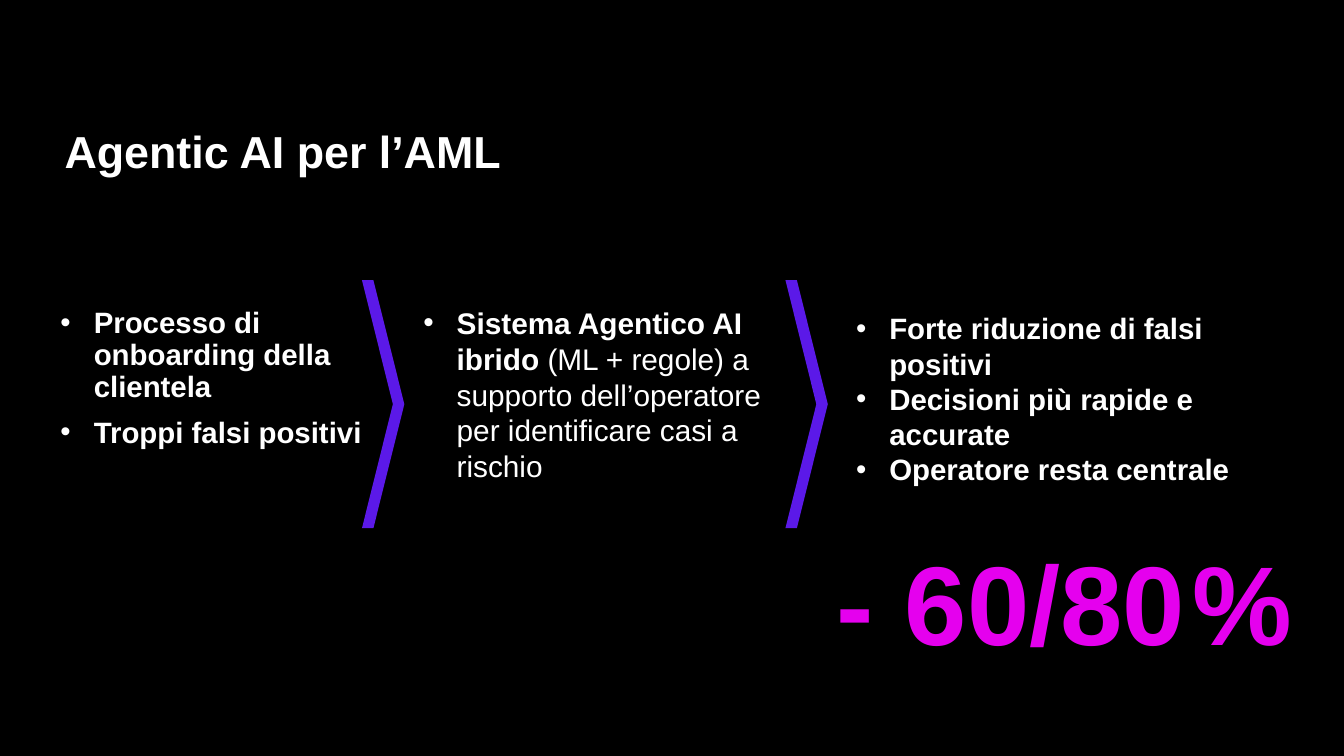
from pptx import Presentation
from pptx.dml.color import RGBColor
from pptx.enum.shapes import MSO_SHAPE
from pptx.enum.text import MSO_ANCHOR, MSO_AUTO_SIZE, PP_ALIGN
from pptx.util import Inches, Pt
from lxml import etree

BLACK = RGBColor(0x00, 0x00, 0x00)
WHITE = RGBColor(0xFF, 0xFF, 0xFF)
VIOLET = RGBColor(0x5B, 0x19, 0xE8)
MAGENTA = RGBColor(0xE5, 0x00, 0xEE)
A = "{http://schemas.openxmlformats.org/drawingml/2006/main}"


def add_run(p, text, size, color=WHITE, bold=True):
    r = p.add_run()
    r.text = text
    r.font.name = "Arial"
    r.font.size = Pt(size)
    r.font.bold = bold
    r.font.color.rgb = color


def add_bullet(p):
    pPr = p._p.get_or_add_pPr()
    pPr.set("marL", str(Inches(0.33)))
    pPr.set("indent", str(-Inches(0.33)))
    etree.SubElement(pPr, A + "buFont", typeface="Arial")
    etree.SubElement(pPr, A + "buChar", char="•")


prs = Presentation()
prs.slide_width, prs.slide_height = Inches(13.33), Inches(7.5)
s = prs.slides.add_slide(prs.slide_layouts.get_by_name("Comparison"))
s.background.fill.solid()
s.background.fill.fore_color.rgb = BLACK

# Title
title = s.shapes.title
title.left, title.top = Inches(0.54), Inches(1.24)
title.width, title.height = Inches(12.24), Inches(0.79)
tf = title.text_frame
tf.auto_size = MSO_AUTO_SIZE.NONE
tf.vertical_anchor = MSO_ANCHOR.TOP
p = tf.paragraphs[0]
p.alignment = PP_ALIGN.LEFT
p.line_spacing = 0.9
add_run(p, "Agentic AI per l’AML", 32)

# Three columns: box, size, line spacing, gap between items, items as (bold, plain)
problem = [("Processo di onboarding della clientela", ""), ("Troppi falsi positivi", "")]
solution = [("Sistema Agentico AI ibrido ",
             "(ML + regole) a supporto dell’operatore per identificare casi a rischio")]
results = [("Forte riduzione di falsi positivi", ""),
           ("Decisioni più rapide e accurate", ""),
           ("Operatore resta centrale", "")]
columns = [
    ((0.5, 3.01, 3.29, 2.34), 21, 0.9, 10, problem),
    ((4.13, 2.98, 3.71, 1.86), 21.3, 1.0, 0, solution),
    ((8.42, 3.04, 4.34, 1.83), 21, 1.0, 0, results),
]
bodies = [sp for sp in s.placeholders if sp.placeholder_format.idx in (1, 2, 3)]
for sp, (box, size, spacing, gap, items) in zip(bodies, columns):
    sp.left, sp.top, sp.width, sp.height = map(Inches, box)
    tf = sp.text_frame
    tf.word_wrap = True
    if items is problem:
        tf.auto_size = MSO_AUTO_SIZE.NONE
        tf.vertical_anchor = MSO_ANCHOR.TOP
    else:
        tf.auto_size = MSO_AUTO_SIZE.SHAPE_TO_FIT_TEXT
        tf.vertical_anchor = MSO_ANCHOR.MIDDLE
        tf.margin_left = tf.margin_right = Inches(0.07)
        tf.margin_top = tf.margin_bottom = Inches(0.03)
    for i, (strong, plain) in enumerate(items):
        p = tf.add_paragraph() if i else tf.paragraphs[0]
        add_bullet(p)
        p.line_spacing = spacing
        p.space_before = Pt(gap if i else 0)
        add_run(p, strong, size)
        if plain:
            add_run(p, plain, size, bold=False)

for sp in list(s.placeholders):
    if not sp.text_frame.text:
        sp.element.getparent().remove(sp.element)

# Chevrons between the columns
for left in (3.59, 7.79):
    sp = s.shapes.add_shape(MSO_SHAPE.CHEVRON, Inches(left), Inches(2.78),
                            Inches(0.42), Inches(2.46))
    sp.adjustments[0] = 0.73
    sp.shadow.inherit = False
    sp.fill.solid()
    sp.fill.fore_color.rgb = VIOLET
    sp.line.fill.background()

# Key figure
sp = s.shapes.add_textbox(Inches(8.2), Inches(5.24), Inches(5.13), Inches(1.75))
tf = sp.text_frame
tf.word_wrap = True
tf.auto_size = MSO_AUTO_SIZE.SHAPE_TO_FIT_TEXT
p = tf.paragraphs[0]
add_run(p, "- 60/80", 80, MAGENTA)
add_run(p, " ", 18, bold=False)
add_run(p, "%", 80, MAGENTA)

prs.save("out.pptx")
